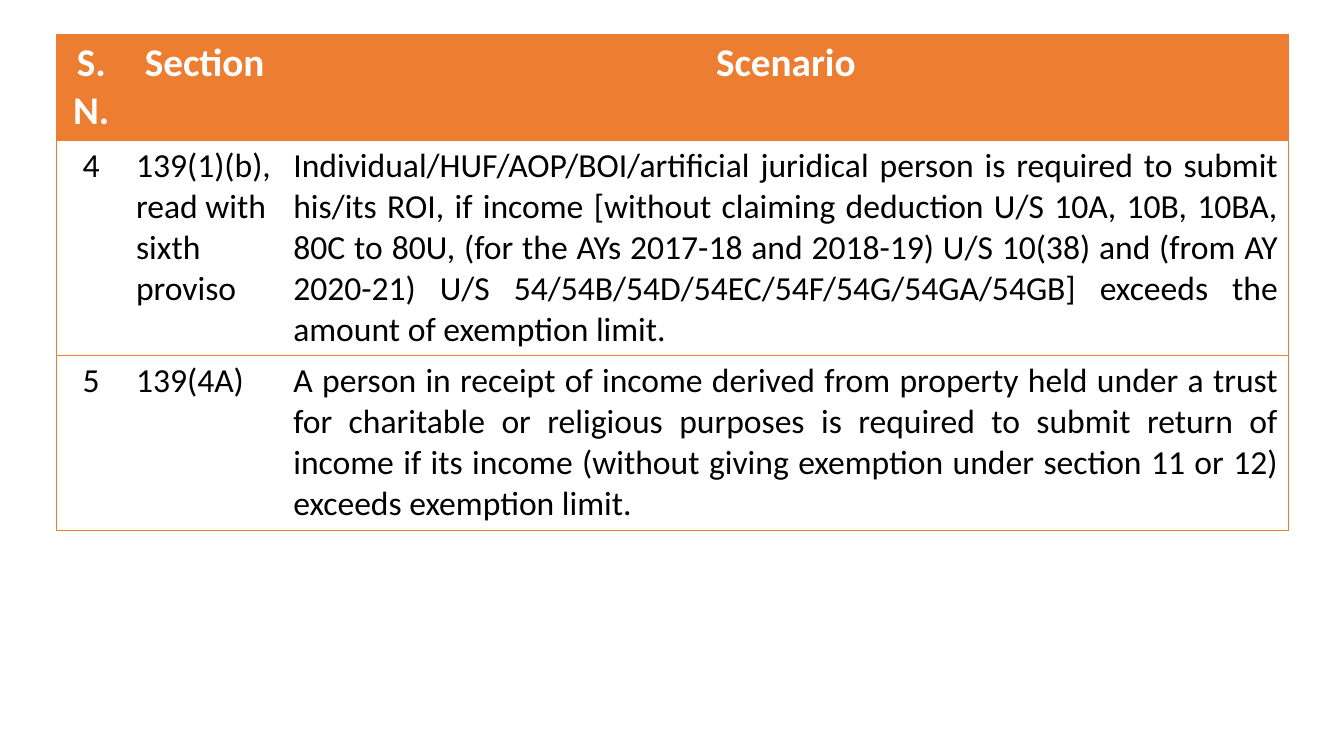
from pptx import Presentation
from pptx import util as u
from pptx.dml.color import RGBColor
from pptx.enum import text
from pptx.oxml import parse_xml
from pptx.oxml.ns import nsdecls

COLORS = {"accent": "ED7D31", "body": "000000", "header": "FFFFFF", "paper": "FFFFFF"}
COLUMN_WIDTHS = [0.69, 1.56, 9.97]
ROW_HEIGHTS = [1.05, 2.13, 1.74]
ALIGNMENTS = [text.PP_ALIGN.CENTER, text.PP_ALIGN.LEFT, text.PP_ALIGN.JUSTIFY]
ROWS = [
    ["S.N.", "Section", "Scenario"],
    [
        "4",
        "139(1)(b), read with sixth proviso",
        "Individual/HUF/AOP/BOI/artificial juridical person is required to submit his/its ROI, "
        "if income [without claiming deduction U/S 10A, 10B, 10BA, 80C to 80U, (for the AYs "
        "2017-18 and 2018-19) U/S 10(38) and (from AY 2020-21) U/S "
        "54/54B/54D/54EC/54F/54G/54GA/54GB] exceeds the amount of exemption limit.",
    ],
    [
        "5",
        "139(4A)",
        "A person in receipt of income derived from property held under a trust for charitable "
        "or religious purposes is required to submit return of income if its income (without "
        "giving exemption under section 11 or 12) exceeds exemption limit.",
    ],
]


class SlideBuilder:
    """Hold the style and the current slide, and add elements to it."""

    def __init__(self, page, font="Calibri"):
        self.page = page
        self.font = font

    def add_table(self, left, top, rows, widths, heights):
        frame = self.page.shapes.add_table(
            len(rows), len(widths), u.Inches(left), u.Inches(top),
            u.Inches(sum(widths)), u.Inches(sum(heights)),
        )
        table = frame.table
        table.horz_banding = False
        for column, width in zip(table.columns, widths):
            column.width = u.Inches(width)
        for row, height in zip(table.rows, heights):
            row.height = u.Inches(height)
        for row_index, row in enumerate(rows):
            for column_index, words in enumerate(row):
                cell = table.cell(row_index, column_index)
                header = row_index == 0
                align = text.PP_ALIGN.CENTER if header else ALIGNMENTS[column_index]
                self.fill_cell(cell, words, header, align)
                self.border_cell(cell, {
                    "L": column_index == 0,
                    "R": column_index == len(widths) - 1,
                    "T": True,
                    "B": True,
                })

    def fill_cell(self, cell, words, header, align):
        cell.fill.solid()
        cell.fill.fore_color.rgb = RGBColor.from_string(COLORS["accent" if header else "paper"])
        cell.text_frame.text = words
        para = cell.text_frame.paragraphs[0]
        para.alignment = align
        font = para.runs[0].font
        font.name = self.font
        font.size = u.Pt(28 if header else 24)
        font.bold = header
        font.color.rgb = RGBColor.from_string(COLORS["header" if header else "body"])

    def border_cell(self, cell, sides):
        properties = cell._tc.get_or_add_tcPr()
        for index, (side, visible) in enumerate(sides.items()):
            paint = (
                f'<a:solidFill><a:srgbClr val="{COLORS["accent"]}"/></a:solidFill>'
                if visible else "<a:noFill/>"
            )
            line = f'<a:ln{side} {nsdecls("a")} w="{u.Pt(0.5)}">{paint}</a:ln{side}>'
            properties.insert(index, parse_xml(line))


def main():
    deck = Presentation()
    deck.slide_width = u.Inches(13.33)
    deck.slide_height = u.Inches(7.5)
    page = deck.slides.add_slide(deck.slide_layouts[6])
    builder = SlideBuilder(page)
    builder.add_table(0.56, 0.34, ROWS, COLUMN_WIDTHS, ROW_HEIGHTS)
    deck.save("out.pptx")


if __name__ == "__main__":
    main()
